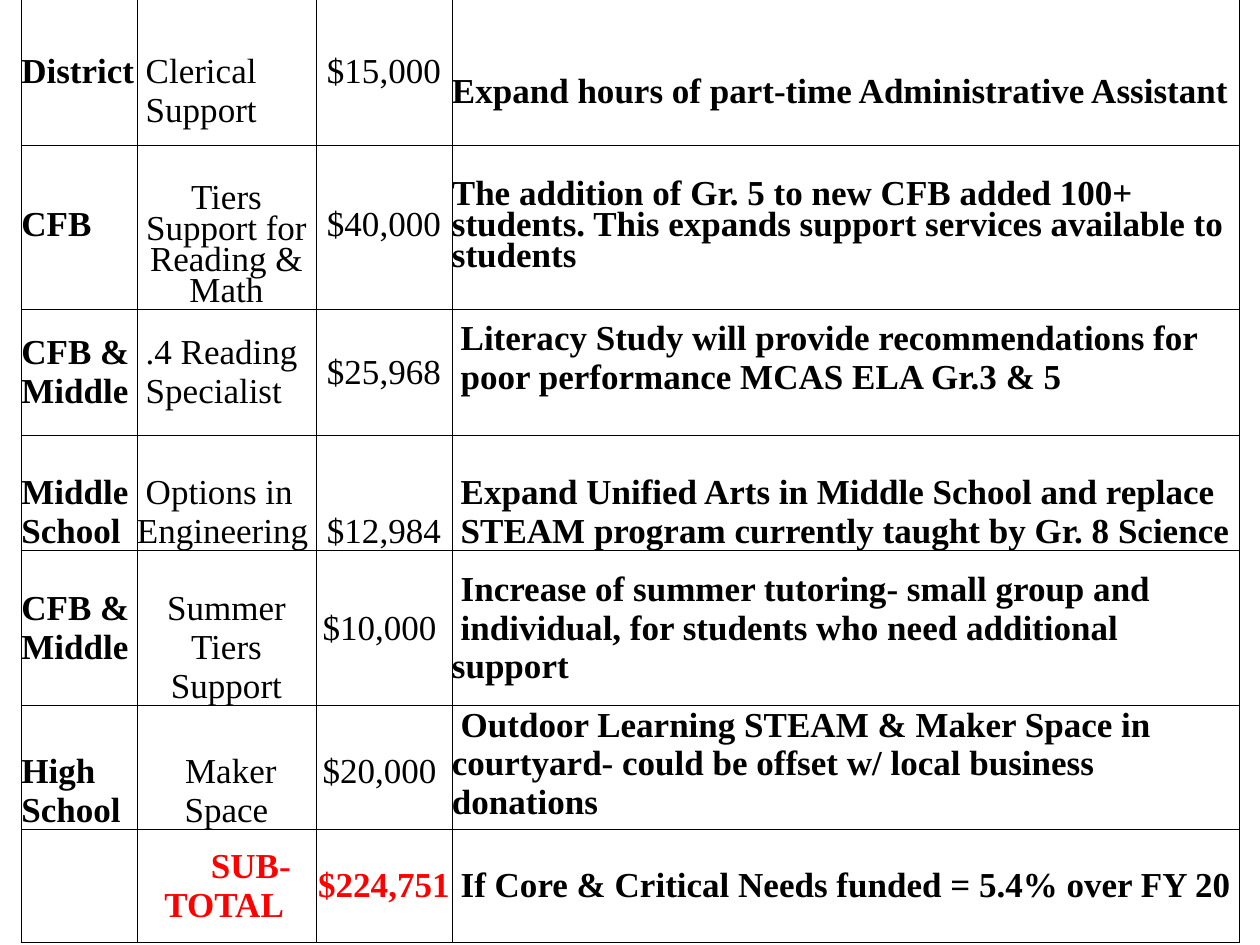
from lxml import etree
from pptx import Presentation
from pptx.dml.color import RGBColor
from pptx.enum.text import MSO_ANCHOR, PP_ALIGN
from pptx.oxml.ns import qn
from pptx.util import Pt

BLACK = RGBColor(0x00, 0x00, 0x00)
RED = RGBColor(0xFF, 0x00, 0x00)
TOP, MIDDLE, BOTTOM = MSO_ANCHOR.TOP, MSO_ANCHOR.MIDDLE, MSO_ANCHOR.BOTTOM
LEFT, CENTER, RIGHT = PP_ALIGN.LEFT, PP_ALIGN.CENTER, PP_ALIGN.RIGHT
FONT, SIZE, LINE = "Times New Roman", 20, 22

COL_WIDTHS = [66.1, 102.3, 77.7, 450.1]
ROW_HEIGHTS = [84, 93.6, 72, 66, 88.5, 70.8, 64.4]


def cell(*lines, **look):
    return lines, look


# Column order: school, item, cost, reason
ROWS = [
    [cell("District"),
     cell(" Clerical", " Support", top=LINE),
     cell("$15,000"),
     cell("Expand hours of part-time Administrative Assistant",
          anchor=BOTTOM, spacing=0.9, bottom=20)],
    [cell("CFB", spacing=0.8),
     cell("Tiers Support for Reading & Math", anchor=BOTTOM, align=CENTER, spacing=0.8),
     cell("$40,000", spacing=0.8),
     cell("The addition of Gr. 5 to new CFB added 100+ students. "
          "This expands support services available to students", spacing=0.8)],
    [cell("CFB & Middle"),
     cell(" .4 Reading", " Specialist"),
     cell("$25,968"),
     cell(" Literacy Study will provide recommendations for",
          " poor performance MCAS ELA Gr.3 & 5", anchor=BOTTOM, bottom=LINE)],
    [cell("Middle School", anchor=BOTTOM),
     cell(" Options in Engineering", anchor=BOTTOM),
     cell("$12,984", anchor=BOTTOM),
     cell(" Expand Unified Arts in Middle School and replace",
          " STEAM program currently taught by Gr. 8 Science", anchor=BOTTOM)],
    [cell("CFB & Middle"),
     cell("Summer Tiers Support", anchor=TOP, align=CENTER, top=LINE),
     cell("$10,000 "),
     cell(" Increase of summer tutoring- small group and",
          " individual, for students who need additional support")],
    [cell("High School", anchor=BOTTOM),
     cell(" Maker Space", anchor=BOTTOM, align=CENTER),
     cell("$20,000 ", anchor=BOTTOM, bottom=LINE),
     cell(" Outdoor Learning STEAM & Maker Space in",
          "courtyard- could be offset w/ local business donations", anchor=TOP)],
    [cell(),
     cell("SUB- TOTAL ", align=RIGHT, right=14.4, bold=True, color=RED),
     cell("$224,751", bold=True, color=RED),
     cell(" If Core & Critical Needs funded = 5.4% over FY 20")],
]
COLUMN_LOOKS = [
    {"align": LEFT, "bold": True},
    {"align": LEFT, "bold": False},
    {"align": CENTER, "bold": False},
    {"align": LEFT, "bold": True},
]


def set_borders(c, color, width):
    tc_pr = c._tc.get_or_add_tcPr()
    for i, side in enumerate(("lnL", "lnR", "lnT", "lnB")):
        ln = etree.Element(qn(f"a:{side}"), w=str(Pt(width)))
        fill = etree.SubElement(ln, qn("a:solidFill"))
        etree.SubElement(fill, qn("a:srgbClr"), val=str(color))
        tc_pr.insert(i, ln)


def fill_cell(c, lines, align, bold, anchor=MIDDLE, spacing=None, color=BLACK,
              top=0, right=0, bottom=0):
    c.fill.background()
    set_borders(c, BLACK, 0.5)
    c.vertical_anchor = anchor
    c.margin_left, c.margin_right = Pt(0), Pt(right)
    c.margin_top, c.margin_bottom = Pt(top), Pt(bottom)
    tf = c.text_frame
    for i, line in enumerate(lines):
        p = tf.add_paragraph() if i else tf.paragraphs[0]
        p.alignment = align
        if spacing:
            p.line_spacing = spacing
        r = p.add_run()
        r.text = line
        r.font.name, r.font.size, r.font.bold = FONT, Pt(SIZE), bold
        r.font.color.rgb = color


def add_budget_table(s, left, top):
    table = s.shapes.add_table(
        len(ROWS), len(COL_WIDTHS), Pt(left), Pt(top),
        Pt(sum(COL_WIDTHS)), Pt(sum(ROW_HEIGHTS))).table
    table.first_row = table.horz_banding = False
    for column, width in zip(table.columns, COL_WIDTHS):
        column.width = Pt(width)
    for i, (row, height) in enumerate(zip(ROWS, ROW_HEIGHTS)):
        table.rows[i].height = Pt(height)
        for j, (lines, look) in enumerate(row):
            fill_cell(table.cell(i, j), lines, **{**COLUMN_LOOKS[j], **look})


def main():
    prs = Presentation()
    prs.slide_width, prs.slide_height = Pt(720), Pt(540)
    s = prs.slides.add_slide(prs.slide_layouts[6])
    add_budget_table(s, 12.2, -0.9)
    prs.save("out.pptx")


if __name__ == "__main__":
    main()
